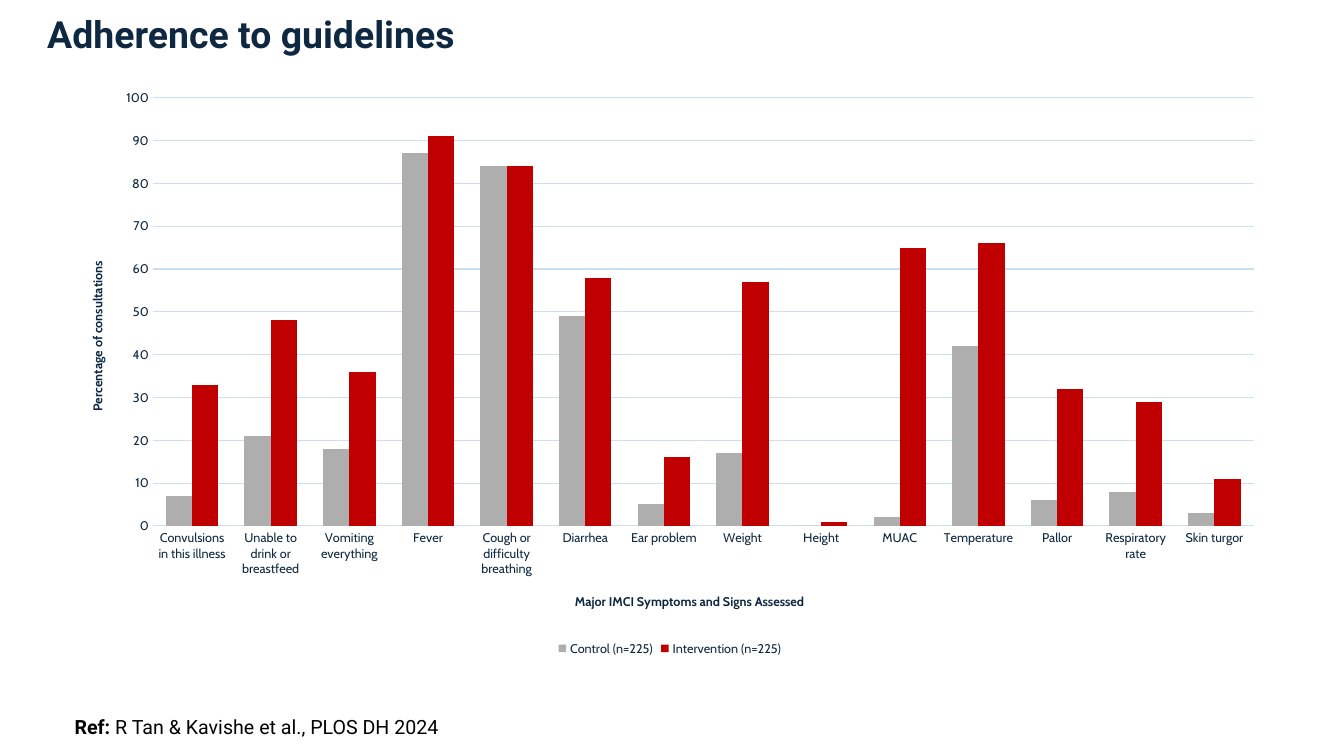
import pptx
import pptx.chart.data
import pptx.dml.color
import pptx.enum.chart
import pptx.oxml
import pptx.oxml.ns
import pptx.util

Cm = pptx.util.Cm
Pt = pptx.util.Pt
RGB = pptx.dml.color.RGBColor
NAVY = RGB(0x0E, 0x28, 0x41)
BLACK = RGB(0, 0, 0)
PALE = RGB(0xCA, 0xDF, 0xF4)
GREY = RGB(0xAE, 0xAE, 0xAE)
RED = RGB(0xC0, 0, 0)

SIGNS = [
    "Convulsions in this illness", "Unable to drink or breastfeed",
    "Vomiting everything", "Fever", "Cough or difficulty breathing",
    "Diarrhea", "Ear problem", "Weight", "Height", "MUAC", "Temperature",
    "Pallor", "Respiratory rate", "Skin turgor",
]
ARMS = [
    ("Control (n=225)", GREY, [7, 21, 18, 87, 84, 49, 5, 17, 0, 2, 42, 6, 8, 3]),
    ("Intervention (n=225)", RED,
     [33, 48, 36, 91, 84, 58, 16, 57, 1, 65, 66, 32, 29, 11]),
]


def set_font(font, size, color, bold=False, name="Cabin"):
    """Set the face, size, colour and weight of a font."""
    font.name = name
    font.size = Pt(size)
    font.bold = bold
    font.color.rgb = color


def add_text(slide, box, size, color, runs):
    """Place one line of text, given as (words, bold) runs, in the box."""
    frame = slide.shapes.add_textbox(*map(Cm, box)).text_frame
    frame.word_wrap = True
    line = frame.paragraphs[0]
    for words, bold in runs:
        run = line.add_run()
        run.text = words
        set_font(run.font, size, color, bold, "Roboto")
    return line


def set_place(node, index, inner=False, **spots):
    """Fix the place of a chart part as fractions of the chart."""
    for old in node.findall(pptx.oxml.ns.qn("c:layout")):
        node.remove(old)
    parts = '<c:layoutTarget val="inner"/>' if inner else ""
    parts += "".join(f'<c:{key}Mode val="edge"/>' for key in "xy")
    parts += "".join(f'<c:{key} val="{spot}"/>' for key, spot in spots.items())
    node.insert(index, pptx.oxml.parse_xml(
        f'<c:layout {pptx.oxml.ns.nsdecls("c")}>'
        f'<c:manualLayout>{parts}</c:manualLayout></c:layout>'))


def set_axis(axis, label, x, y):
    """Style an axis and put its title at x, y."""
    axis.major_tick_mark = axis.minor_tick_mark = pptx.enum.chart.XL_TICK_MARK.NONE
    set_font(axis.tick_labels.font, 9, NAVY)
    title = axis.axis_title
    run = title.text_frame.paragraphs[0].add_run()
    run.text = label
    set_font(run.font, 9, NAVY, True)
    set_place(title._element, 1, x=x, y=y)


def add_bars(slide, box):
    """Draw the clustered columns of both arms in the box."""
    data = pptx.chart.data.CategoryChartData(number_format="0")
    data.categories = SIGNS
    for name, _, shares in ARMS:
        data.add_series(name, shares)
    chart = slide.shapes.add_chart(
        pptx.enum.chart.XL_CHART_TYPE.COLUMN_CLUSTERED, *map(Cm, box), data).chart
    chart.has_title = False
    set_font(chart.font, 10, BLACK)
    plot = chart.plots[0]
    plot.vary_by_categories = False
    plot.gap_width = 100
    plot.overlap = 0
    for bars, (_, color, _) in zip(plot.series, ARMS):
        bars.format.fill.solid()
        bars.format.fill.fore_color.rgb = color

    signs, scale = chart.category_axis, chart.value_axis
    set_axis(signs, "Major IMCI Symptoms and Signs Assessed", 0.42, 0.88)
    set_axis(scale, "Percentage of consultations", 0.02, 0.31)
    scale.minimum_scale, scale.maximum_scale, scale.major_unit = 0, 100, 10
    scale.format.line.fill.background()
    for line in (signs.format.line, scale.major_gridlines.format.line):
        line.color.rgb = PALE
        line.width = Pt(0.75)

    chart.has_legend = True
    chart.legend.position = pptx.enum.chart.XL_LEGEND_POSITION.BOTTOM
    chart.legend.include_in_layout = False
    set_font(chart.legend.font, 9, NAVY)
    area = chart._chartSpace.chart.plotArea
    set_place(area, 0, True, x=0.075, y=0.033, w=0.905, h=0.736)


def main():
    """Build the slide and save it."""
    deck = pptx.Presentation()
    deck.slide_width, deck.slide_height = Cm(33.87), Cm(19.05)
    slide = deck.slides.add_slide(deck.slide_layouts[6])
    add_bars(slide, (1.55, 1.98, 30.66, 14.66))
    add_text(slide, (0.94, 0.15, 33.6, 1.78), 26.7, NAVY,
             [("Adherence to guidelines", True)])
    ref = add_text(slide, (1.63, 17.81, 17.53, 0.89), 14, BLACK,
                   [("Ref: ", True), ("R Tan & Kavishe et al., PLOS DH 2024", False)])
    ref.line_spacing = 1.15
    deck.save("out.pptx")


if __name__ == "__main__":
    main()
